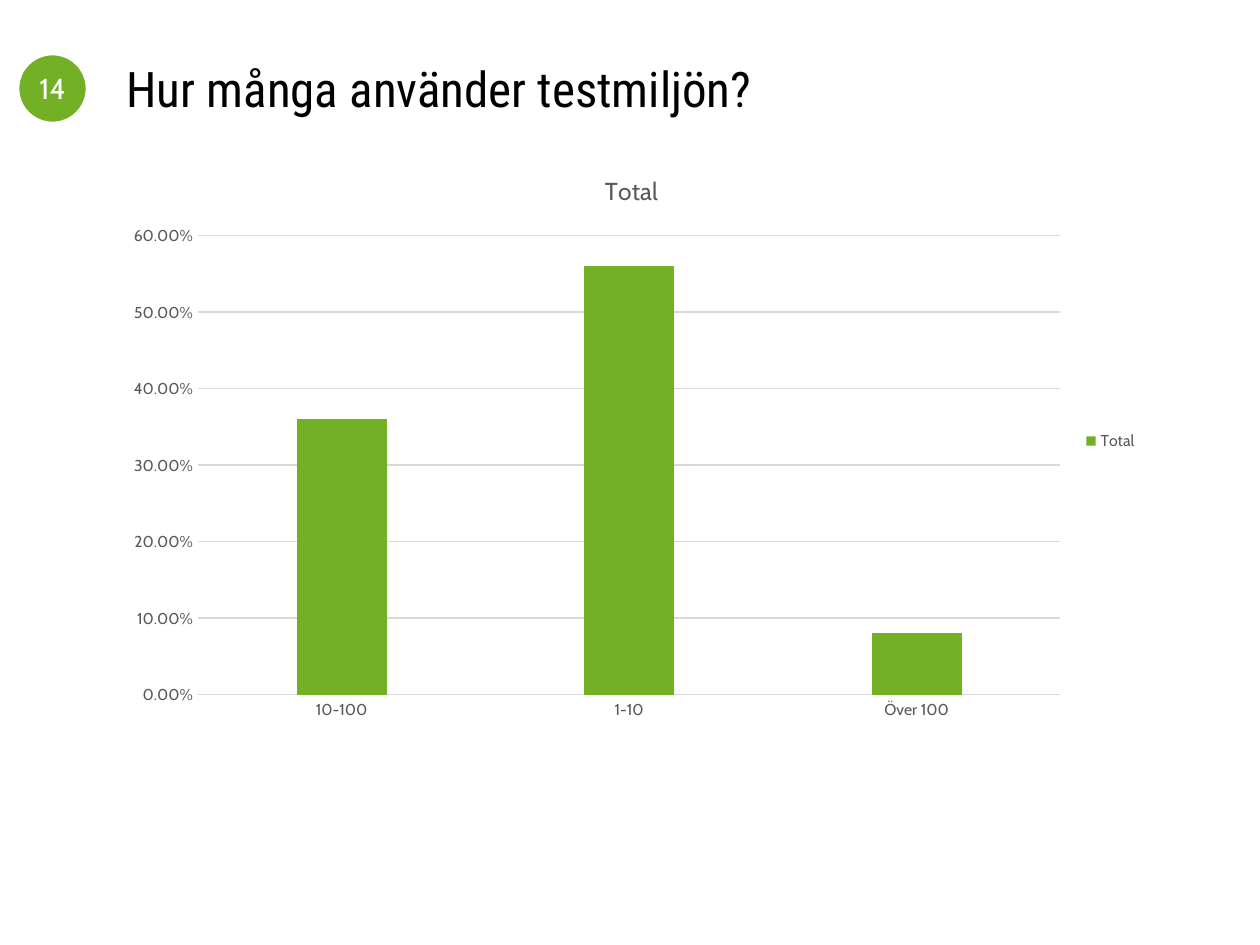
import pptx
import pptx.util
import pptx.chart.data
import pptx.dml.color
import pptx.enum.chart
import pptx.enum.shapes
import pptx.enum.text

Pt = pptx.util.Pt
RGB = pptx.dml.color.RGBColor
GREEN = RGB(0x73, 0xB0, 0x26)
WHITE = RGB(0xFF, 0xFF, 0xFF)
BLACK = RGB(0x00, 0x00, 0x00)
GREY = RGB(0x59, 0x59, 0x59)
PALE = RGB(0xD9, 0xD9, 0xD9)
BODY = "Cabin"
HEAD = "Roboto Condensed"
ALIGN = pptx.enum.text.PP_ALIGN
NONE = pptx.enum.chart.XL_TICK_MARK.NONE


def px(*nums):
    """Turn pixels, 126 to the inch, into EMU."""
    return [round(n * 914400 / 126) for n in nums]


def write(frame, text, size, color, font=BODY, align=ALIGN.LEFT):
    frame.text = text
    para = frame.paragraphs[0]
    para.alignment = align
    face = para.runs[0].font
    face.name, face.size, face.bold = font, Pt(size), False
    face.color.rgb = color


deck = pptx.Presentation()
deck.slide_width, deck.slide_height = px(1260, 945)
slide = deck.slides.add_slide(deck.slide_layouts[5])

# Page number badge
badge = slide.shapes.add_shape(
    pptx.enum.shapes.MSO_SHAPE.OVAL, *px(18, 54, 69, 69))
badge.shadow.inherit = False
badge.fill.solid()
badge.fill.fore_color.rgb = GREEN
badge.line.color.rgb = WHITE
badge.line.width = Pt(1.5)
frame = badge.text_frame
frame.margin_left = frame.margin_right = frame.margin_top = px(1)[0]
frame.margin_bottom = px(2)[0]
frame.vertical_anchor = pptx.enum.text.MSO_ANCHOR.MIDDLE
write(frame, "14", 16.5, WHITE, align=ALIGN.CENTER)

# Title
title = slide.shapes.title
title.left, title.top, title.width, title.height = px(114, 50, 1036, 76)
title.text_frame.vertical_anchor = pptx.enum.text.MSO_ANCHOR.MIDDLE
write(title.text_frame, "Hur många använder testmiljön?", 28, BLACK, font=HEAD)

# Column chart
data = pptx.chart.data.CategoryChartData(number_format="0.00%")
data.categories = ["10-100", "1-10", "Över 100"]
data.add_series("Total", [0.36, 0.56, 0.08])
chart = slide.shapes.add_chart(
    pptx.enum.chart.XL_CHART_TYPE.COLUMN_CLUSTERED,
    *px(113, 151, 1037, 580), data).chart
chart.font.name, chart.font.size = BODY, Pt(10)
chart.font.color.rgb = BLACK
chart.has_title = True
write(chart.chart_title.text_frame, "Total", 14, GREY, align=ALIGN.CENTER)
chart.chart_title.include_in_layout = False

plot = chart.plots[0]
plot.gap_width, plot.overlap = 219, -27
plot.vary_by_categories = False
bars = plot.series[0]
bars.invert_if_negative = False
bars.format.fill.solid()
bars.format.fill.fore_color.rgb = GREEN

chart.has_legend = True
chart.legend.position = pptx.enum.chart.XL_LEGEND_POSITION.RIGHT
chart.legend.include_in_layout = False

cats, vals = chart.category_axis, chart.value_axis
for part in (cats.tick_labels, vals.tick_labels, chart.legend):
    part.font.name, part.font.size = BODY, Pt(9)
    part.font.color.rgb = GREY
for axis in (cats, vals):
    axis.major_tick_mark = axis.minor_tick_mark = NONE

vals.minimum_scale, vals.maximum_scale, vals.major_unit = 0, 0.6, 0.1
vals.has_major_gridlines = True
vals.tick_labels.number_format = "0.00%"
vals.tick_labels.number_format_is_linked = False
vals.format.line.fill.background()
for line in (cats.format.line, vals.major_gridlines.format.line):
    line.color.rgb = PALE
    line.width = Pt(0.75)

deck.save("out.pptx")
